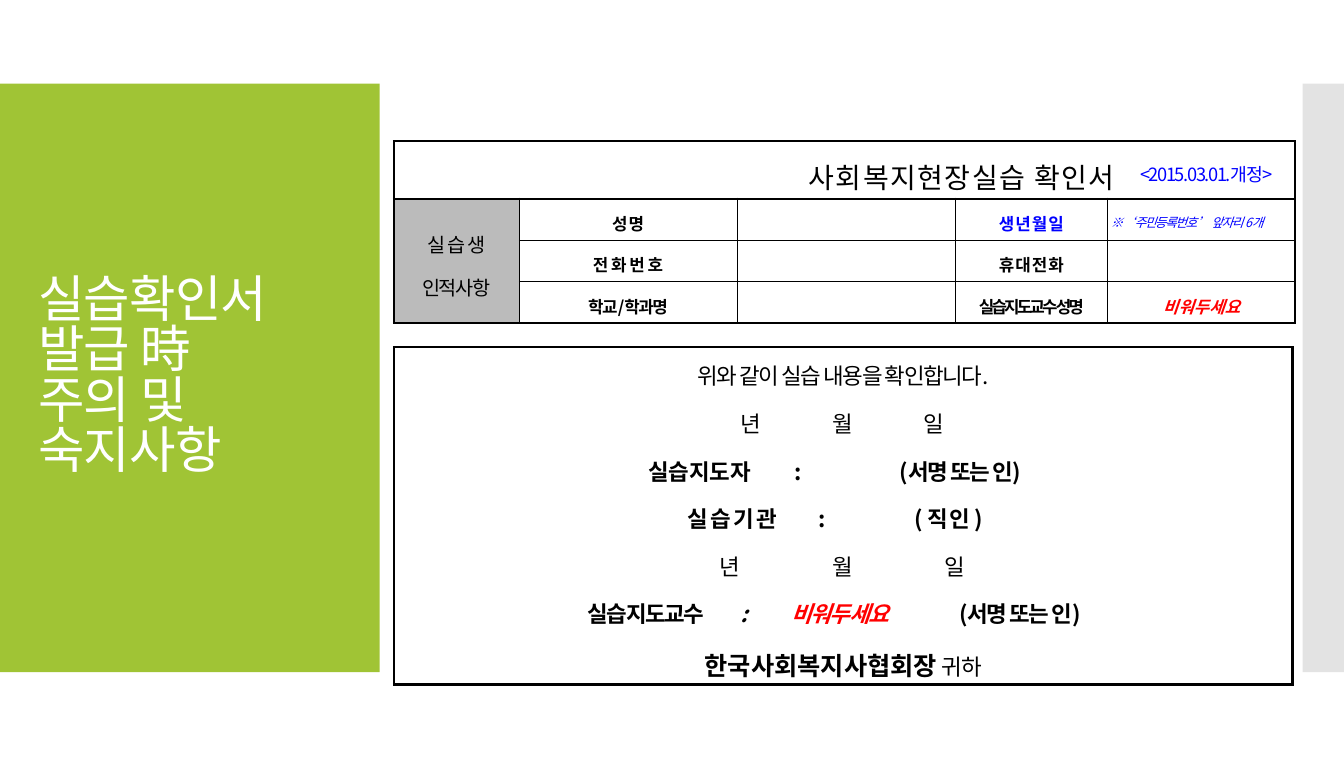
from dataclasses import dataclass

from lxml.etree import SubElement
from pptx import Presentation
from pptx.dml.color import RGBColor
from pptx.enum.shapes import MSO_SHAPE
from pptx.enum.text import MSO_ANCHOR, PP_ALIGN
from pptx.oxml.ns import qn
from pptx.util import Inches, Pt


@dataclass(frozen=True)
class Theme:
    green: str = "A0C435"
    side: str = "E3E3E3"
    label: str = "BBBBBB"
    white: str = "FFFFFF"
    ink: str = "000000"
    blue: str = "0000FF"
    red: str = "FF0000"
    korean: str = "Noto Sans CJK KR"
    latin: str = "Calibri"
    title: float = 36
    heading: float = 20
    addressee: float = 18
    body: float = 16
    section: float = 14
    revision: float = 13
    field: float = 12
    hint: float = 9
    hairline: float = 0.28
    frame: float = 1.7
    rule: float = 1.98


THEME = Theme()


@dataclass(frozen=True)
class Piece:
    text: str
    size: float
    color: str = THEME.ink
    spacing: float = -1
    bold: bool = False
    italic: bool = False
    font: str = THEME.latin


@dataclass(frozen=True)
class Line:
    pieces: tuple[Piece, ...]
    align: PP_ALIGN = PP_ALIGN.CENTER
    tabs: tuple[float, ...] = ()


@dataclass(frozen=True)
class Entry:
    row: int
    col: int
    lines: tuple[Line, ...] = ()
    rows: int = 1
    cols: int = 1
    fill: str = ""


@dataclass(frozen=True)
class Form:
    left: float
    top: float
    widths: tuple[float, ...]
    heights: tuple[float, ...]
    entries: tuple[Entry, ...]


def style_run(run, piece: Piece) -> None:
    run.font.size = Pt(piece.size)
    run.font.bold = piece.bold
    run.font.italic = piece.italic
    run.font.name = piece.font
    run.font.color.rgb = RGBColor.from_string(piece.color)
    properties = run._r.get_or_add_rPr()
    properties.set("spc", str(int(piece.spacing * 100)))
    east_asian = SubElement(properties, qn("a:ea"))
    east_asian.set("typeface", THEME.korean)


def write_line(paragraph, line: Line) -> None:
    paragraph.alignment = line.align
    paragraph.line_spacing = 1.3
    paragraph.space_before = paragraph.space_after = Pt(2)
    if line.tabs:
        stops = SubElement(paragraph._p.get_or_add_pPr(), qn("a:tabLst"))
        for position in line.tabs:
            stop = SubElement(stops, qn("a:tab"))
            stop.set("pos", str(Inches(position)))
            stop.set("algn", "l")
    for piece in line.pieces:
        run = paragraph.add_run()
        run.text = piece.text
        style_run(run, piece)


def draw_borders(cell, widths: dict[str, float]) -> None:
    properties = cell._tc.get_or_add_tcPr()
    for side, width in widths.items():
        edge = SubElement(properties, qn(f"a:ln{side}"))
        edge.set("w", str(Pt(width)))
        if width:
            fill = SubElement(edge, qn("a:solidFill"))
            SubElement(fill, qn("a:srgbClr")).set("val", THEME.ink)
        else:
            SubElement(edge, qn("a:noFill"))


def edge_widths(form: Form, row: int, col: int) -> dict[str, float]:
    last_row, last_col = len(form.heights) - 1, len(form.widths) - 1
    inner = THEME.hairline if row else 0
    return {
        "L": inner if col else THEME.frame,
        "R": inner if col < last_col else THEME.frame,
        "T": (THEME.frame, THEME.rule)[row] if row < 2 else THEME.hairline,
        "B": THEME.rule if row in (0, last_row) else THEME.hairline,
    }


def draw_form(slide, form: Form) -> None:
    table = slide.shapes.add_table(
        len(form.heights), len(form.widths), Inches(form.left), Inches(form.top),
        Inches(sum(form.widths)), Inches(sum(form.heights))).table
    table.first_row = table.horz_banding = False
    for column, width in zip(table.columns, form.widths):
        column.width = Inches(width)
    for table_row, height in zip(table.rows, form.heights):
        table_row.height = Inches(height)
    for row in range(len(form.heights)):
        for col in range(len(form.widths)):
            cell = table.cell(row, col)
            draw_borders(cell, edge_widths(form, row, col))
            cell.fill.background()
            cell.vertical_anchor = MSO_ANCHOR.MIDDLE
            cell.margin_left = cell.margin_right = Inches(0.03)
            cell.margin_top = cell.margin_bottom = Inches(0.02)
    for entry in form.entries:
        cell = table.cell(entry.row, entry.col)
        if entry.rows * entry.cols > 1:
            end = table.cell(entry.row + entry.rows - 1, entry.col + entry.cols - 1)
            draw_end = edge_widths(form, entry.row + entry.rows - 1, entry.col + entry.cols - 1)
            for side in "RB":
                stale = cell._tc.tcPr.find(qn(f"a:ln{side}"))
                stale.set("w", str(Pt(draw_end[side])))
            cell.merge(end)
        if entry.fill:
            cell.fill.solid()
            cell.fill.fore_color.rgb = RGBColor.from_string(entry.fill)
        for index, line in enumerate(entry.lines):
            paragraphs = cell.text_frame.paragraphs
            write_line(cell.text_frame.add_paragraph() if index else paragraphs[0], line)


def draw_band(slide, left: float, width: float, color: str) -> None:
    band = slide.shapes.add_shape(
        MSO_SHAPE.RECTANGLE, Inches(left), Inches(0.83), Inches(width), Inches(5.83))
    band.shadow.inherit = False
    band.fill.solid()
    band.fill.fore_color.rgb = RGBColor.from_string(color)
    band.line.fill.background()


def draw_title(slide, text: str) -> None:
    title = slide.shapes.title
    slide.shapes.element.append(title.element)
    title.left, title.top = Inches(0.28), Inches(1.23)
    title.width, title.height = Inches(3.22), Inches(5.03)
    title.text_frame.text = text
    title.text_frame.word_wrap = True
    title.text_frame.vertical_anchor = MSO_ANCHOR.MIDDLE
    paragraph = title.text_frame.paragraphs[0]
    paragraph.alignment = PP_ALIGN.LEFT
    paragraph.line_spacing = 0.83
    for run in paragraph.runs:
        style_run(run, Piece(run.text, THEME.title, THEME.white, -0.6, font=THEME.korean))


def field(text: str, color: str = THEME.ink, spacing: float = -1, italic: bool = False) -> tuple[Line, ...]:
    return (Line((Piece(text, THEME.field, color, spacing, True, italic),)),)


def mixed(*texts: str, size: float, color: str = THEME.ink, bold: bool = False,
          italic: bool = False) -> tuple[Piece, ...]:
    return tuple(
        Piece(text, size, color, -1, bold, italic,
              THEME.latin if any("가" <= letter <= "힣" for letter in text) else THEME.korean)
        for text in texts)


def tabbed(tabs: tuple[float, ...], *pieces: Piece) -> Line:
    return Line(pieces, PP_ALIGN.LEFT, tabs)


TRAINEE = Form(3.9, 1.4, (1.24, 2.16, 2.16, 1.51, 0.06, 1.76), (0.57, 0.41, 0.41, 0.41), (
    Entry(0, 0, (Line((Piece("사회복지현장실습 확인서", THEME.heading, spacing=1),), PP_ALIGN.RIGHT),), cols=5),
    Entry(0, 5, (Line(mixed("<2015.03.01.", "개정", ">", size=THEME.revision, color=THEME.blue)),)),
    Entry(1, 0, tuple(Line(mixed(text, size=THEME.section)) for text in ("실 습 생", "인적사항")),
          rows=3, fill=THEME.label),
    Entry(1, 1, field("성 명")),
    Entry(1, 3, field("생 년 월 일", THEME.blue)),
    Entry(1, 4, (Line(mixed("※", "‘", "주민등록번호", "’ ", "앞자리 ", "6", "개", size=THEME.hint,
                            color=THEME.blue, italic=True), PP_ALIGN.JUSTIFY),), cols=2),
    Entry(2, 1, field("전화번호", spacing=2)),
    Entry(2, 3, field("휴 대 전 화")),
    Entry(2, 4, cols=2),
    Entry(3, 1, (Line(mixed("학교", "/", "학과명", size=THEME.field, bold=True)),)),
    Entry(3, 3, field("실습지도교수 성명", spacing=-2)),
    Entry(3, 4, field("비워두세요", THEME.red, 0, True), cols=2),
))

SIGNATURE = mixed("\t(", "서명 또는 인", ")", size=THEME.body, bold=True)
DATE = mixed("\t년\t월\t일", size=THEME.body)

CONFIRMATION = Form(3.9, 3.44, (8.9,), (3.12,), (Entry(0, 0, (
    Line(mixed("위와 같이 실습 내용을 확인합니다", ".", size=THEME.body)),
    tabbed((3.4, 4.31, 5.22), *DATE),
    tabbed((2.49, 3.94, 4.98), Piece("\t실습지도자", THEME.body, spacing=0, bold=True),
           *mixed("\t:", size=THEME.body, bold=True), *SIGNATURE),
    tabbed((2.88, 4.18, 5.13),
           *mixed("\t실 습 기 관", "\t:", "\t( ", "직 인 ", ")", size=THEME.body, bold=True)),
    tabbed((3.2, 4.31, 5.42), *DATE),
    tabbed((1.89, 3.4, 3.91, 5.57), *mixed("\t실습지도교수", size=THEME.body, bold=True),
           *mixed("\t:", size=THEME.body, bold=True, italic=True),
           *mixed("\t비워두세요", size=THEME.body, color=THEME.red, bold=True, italic=True), *SIGNATURE),
    Line((Piece("한국사회복지사협회장", THEME.addressee, spacing=0, bold=True),
          *mixed(" ", "귀하", size=THEME.body))),
)),))


def main() -> None:
    deck = Presentation()
    deck.slide_width, deck.slide_height = Inches(13.31), Inches(7.5)
    slide = deck.slides.add_slide(deck.slide_layouts[5])
    draw_band(slide, 0, 3.76, THEME.green)
    draw_band(slide, 12.9, 0.41, THEME.side)
    draw_title(slide, "실습확인서 발급 時\v주의 및 숙지사항")
    for form in (TRAINEE, CONFIRMATION):
        draw_form(slide, form)
    deck.save("out.pptx")


if __name__ == "__main__":
    main()
